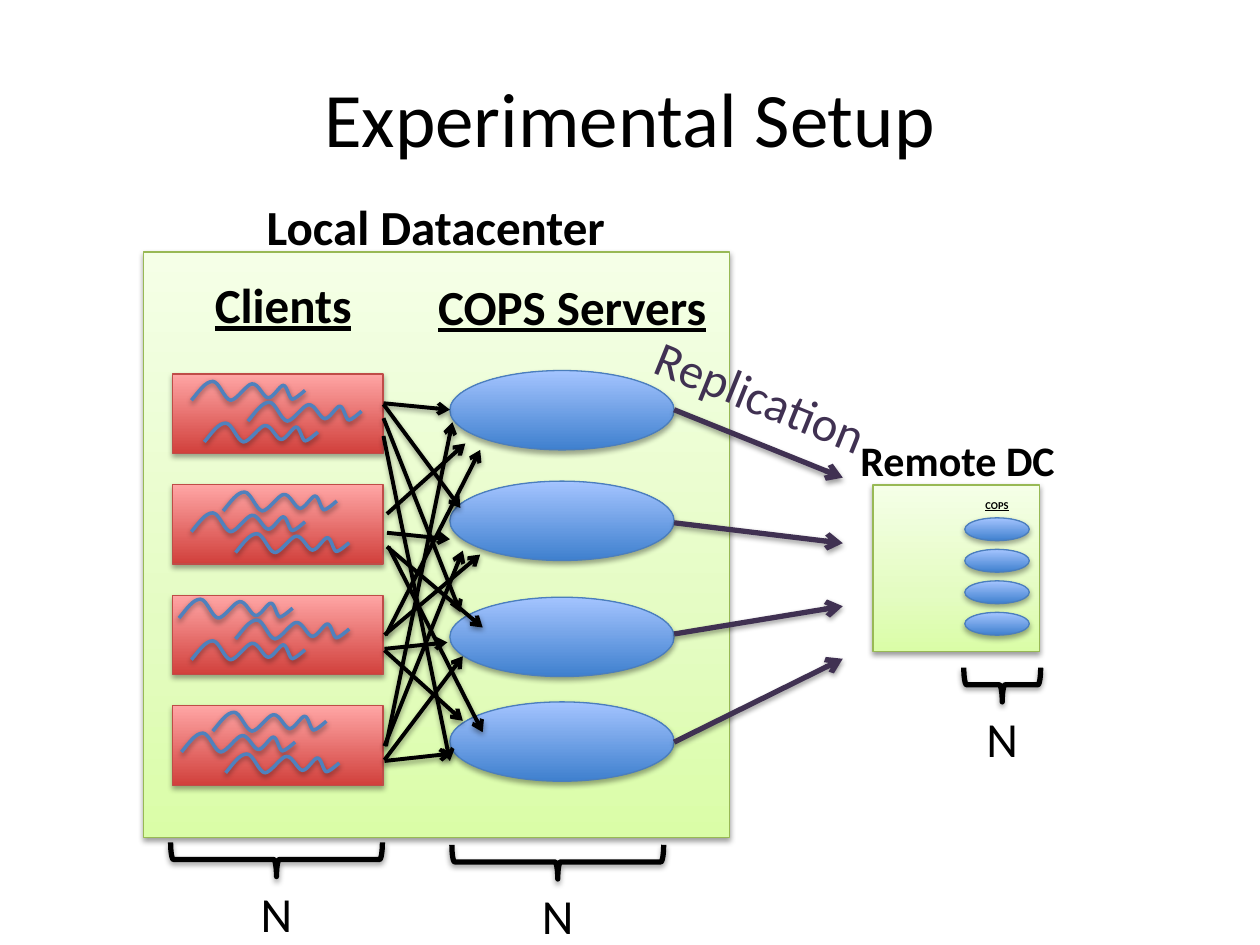
from copy import deepcopy

from lxml.etree import SubElement
from pptx import Presentation
from pptx.dml.color import RGBColor
from pptx.enum.shapes import MSO_CONNECTOR, MSO_SHAPE
from pptx.enum.text import MSO_ANCHOR, PP_ALIGN
from pptx.oxml.ns import qn
from pptx.util import Cm, Pt

BLACK = RGBColor(0x00, 0x00, 0x00)
PURPLE = RGBColor(0x40, 0x31, 0x52)
WAVE_BLUE = RGBColor(0x4F, 0x81, 0xBD)
GREEN_EDGE = RGBColor(0x98, 0xB9, 0x55)
BLUE_EDGE = RGBColor(0x4B, 0x7E, 0xBC)
RED_EDGE = RGBColor(0xBF, 0x4C, 0x48)
# Gradient stops run from the bottom of a shape to its top
GREEN = [(0, RGBColor(0xDA, 0xFD, 0xA7)), (0.35, RGBColor(0xE4, 0xFC, 0xC2)),
         (1, RGBColor(0xF5, 0xFF, 0xE7))]
BLUE = [(0, RGBColor(0x3F, 0x80, 0xCE)), (1, RGBColor(0xA4, 0xC4, 0xFF))]
RED = [(0, RGBColor(0xD1, 0x40, 0x3C)), (1, RGBColor(0xFF, 0xA6, 0xA5))]

# Start point, then three points for each Bezier segment
WAVE = [(0, 0.38), (0.15, 0.2), (0.28, 0), (0.43, 0), (0.56, 0), (0.66, 0.36), (0.79, 0.38),
        (0.91, 0.38), (1.12, 0.05), (1.22, 0.05), (1.35, 0.03), (1.45, 0.33), (1.55, 0.33),
        (1.65, 0.33), (1.78, 0.08), (1.85, 0.08), (1.93, 0.08), (1.96, 0.33), (2.03, 0.36),
        (2.08, 0.36), (2.21, 0.25), (2.29, 0.18)]
WAVE_STEP = 0.42
# For each client: top of its first thread, left of each of its threads
CLIENT_THREADS = [(0.15, (0.38, 1.52, 0.64)), (0.15, (1.02, 0.38, 1.27)),
                  (0.08, (0.13, 1.27, 0.38)), (0.13, (0.81, 0.18, 1.07))]
REQUESTS = [
    (4.83, 3.71, 6.17, 10.26), (4.83, 3.05, 6.17, 3.18),
    (4.83, 3.07, 6.38, 5.16), (4.83, 3.35, 6.38, 7.26),
    (4.88, 9.96, 6.22, 3.43), (4.85, 10.26, 6.22, 10.11),
    (4.85, 10.24, 6.43, 8.15), (4.85, 9.96, 6.43, 6.02),
    (4.93, 5.94, 6.83, 9.68), (4.9, 5.28, 6.48, 3.86),
    (4.9, 5.66, 6.17, 5.79), (4.9, 5.94, 6.83, 7.57),
    (4.88, 7.72, 6.78, 3.99), (4.85, 8.03, 6.43, 9.45),
    (4.85, 8, 6.12, 7.87), (4.85, 7.72, 6.78, 6.1),
]
REPLICATIONS = [(0, 1.37), (2.28, 2.69), (4.52, 3.96), (6.7, 5.02)]


def add_shadow(shape, alpha=38, distance=20000):
    effects = SubElement(shape._element.spPr, qn("a:effectLst"))
    shadow = SubElement(effects, qn("a:outerShdw"), blurRad="40000", dist=str(distance),
                        dir="5400000", rotWithShape="0")
    color = SubElement(shadow, qn("a:srgbClr"), val=str(BLACK))
    SubElement(color, qn("a:alpha"), val=str(alpha * 1000))


def set_line(shape, color, width):
    shape.line.color.rgb = color
    shape.line.width = Pt(width)


def add_label(shapes, text, left, top, width, height, size, color=BLACK,
              bold=None, underline=None, wrap=True):
    label = shapes.add_textbox(Cm(left), Cm(top), Cm(width), Cm(height))
    label.text_frame.word_wrap = wrap
    paragraph = label.text_frame.paragraphs[0]
    paragraph.text = text
    paragraph.alignment = PP_ALIGN.CENTER
    font = paragraph.font
    font.name, font.size, font.bold, font.underline = "Calibri", Pt(size), bold, underline
    font.color.rgb = color
    return label


def add_gradient_shape(shapes, kind, left, top, width, height, stops, edge,
                       alpha=35, distance=23000):
    shape = shapes.add_shape(kind, Cm(left), Cm(top), Cm(width), Cm(height))
    shape.fill.gradient()
    shape.fill.gradient_angle = 90
    stop_list = shape._element.spPr.find(".//" + qn("a:gsLst"))
    while len(stop_list) < len(stops):
        stop_list.append(deepcopy(stop_list[-1]))
    for stop, (position, color) in zip(shape.fill.gradient_stops, stops):
        stop.position = position
        stop.color.rgb = color
    set_line(shape, edge, 0.75)
    add_shadow(shape, alpha, distance)


def add_arrow(shapes, x1, y1, x2, y2, color, width):
    arrow = shapes.add_connector(MSO_CONNECTOR.STRAIGHT, Cm(x1), Cm(y1), Cm(x2), Cm(y2))
    set_line(arrow, color, width)
    SubElement(arrow.line._get_or_add_ln(), qn("a:tailEnd"), type="arrow")
    add_shadow(arrow)


def add_thread(shapes, left, top):
    """Draw one wave, turning each three points into a Bezier segment."""
    points = [(Cm(left + x), Cm(top + y)) for x, y in WAVE]
    builder = shapes.build_freeform(*points[0])
    builder.add_line_segments(points[1:], close=False)
    wave = builder.convert_to_shape()
    outline = wave._element.spPr.find(".//" + qn("a:path"))
    lines = outline.findall(qn("a:lnTo"))
    for start in range(0, len(lines), 3):
        curve = SubElement(outline, qn("a:cubicBezTo"))
        for line in lines[start:start + 3]:
            curve.append(line[0])
            outline.remove(line)
    wave.fill.background()
    set_line(wave, WAVE_BLUE, 2)
    add_shadow(wave)


def add_datacenter(shapes, left, top, side):
    add_gradient_shape(shapes, MSO_SHAPE.RECTANGLE, left, top, side, side,
                       GREEN, GREEN_EDGE, 38, 20000)


def add_servers(shapes, left, tops, width, height):
    for top in tops:
        add_gradient_shape(shapes, MSO_SHAPE.OVAL, left, top, width, height, BLUE, BLUE_EDGE)


def add_clients(shapes, left, top, width, height, pitch):
    for row, (first_thread, thread_lefts) in enumerate(CLIENT_THREADS):
        client_top = top + row * pitch
        add_gradient_shape(shapes, MSO_SHAPE.RECTANGLE, left, client_top, width, height,
                           RED, RED_EDGE)
        for thread, thread_left in enumerate(thread_lefts):
            add_thread(shapes, left + thread_left,
                       client_top + first_thread + thread * WAVE_STEP)


def add_local_datacenter(shapes, left, top, side):
    add_datacenter(shapes, left, top, side)
    add_label(shapes, "Local Datacenter", left + 2.15, top - 1.24, 7.47, 1.45, 28,
              bold=True, wrap=False)
    add_label(shapes, "COPS Servers", left + 5.46, top + 0.36, 6.35, 1.45, 28,
              bold=True, underline=True)
    add_servers(shapes, left + 6.17, [top + y for y in (2.39, 4.62, 6.96, 9.07)], 4.52, 1.6)
    add_label(shapes, "Clients", left + 0.41, top + 0.33, 4.8, 1.45, 28,
              bold=True, underline=True)
    add_clients(shapes, left + 0.58, top + 2.46, 4.24, 1.6, 2.23)
    for x1, y1, x2, y2 in REQUESTS:
        add_arrow(shapes, left + x1, top + y1, left + x2, top + y2, BLACK, 2.25)


def add_remote_datacenter(shapes, left, top, side):
    add_datacenter(shapes, left, top, side)
    add_label(shapes, "Remote DC", left - 1.47, top - 1.14, 6.35, 1.45, 24, bold=True)
    add_label(shapes, "COPS", left + 1.6, top + 0.15, 1.8, 0.41, 6, bold=True, underline=True)
    add_servers(shapes, left + 1.85, [top + 0.66 + 0.635 * row for row in range(4)], 1.3, 0.46)


def add_replication(shapes, left, top, width):
    for start, end in REPLICATIONS:
        add_arrow(shapes, left, top + start, left + width, top + end, PURPLE, 3)
    label = add_label(shapes, "Replication", left - 1.42, top - 1, 6.35, 1.45, 28, PURPLE)
    label.rotation = 22.1


def add_counted_brace(shapes, left, top, width, height):
    """Place a downward brace in the box as seen, with N beneath it."""
    center_x, center_y = left + width / 2, top + height / 2
    brace = shapes.add_shape(MSO_SHAPE.LEFT_BRACE, Cm(center_x - height / 2),
                             Cm(center_y - width / 2), Cm(height), Cm(width))
    brace.rotation = 270
    brace.fill.background()
    set_line(brace, BLACK, 3)
    add_shadow(brace)
    add_label(shapes, "N", center_x - 0.58, top + 0.7, 1.16, 1.45, 28, wrap=False)


def main():
    presentation = Presentation()
    presentation.slide_width, presentation.slide_height = Cm(25.4), Cm(19.05)
    shapes = presentation.slides.add_slide(presentation.slide_layouts[6]).shapes

    title = add_label(shapes, "Experimental Setup", 1.27, 0.76, 22.86, 3.18, 44)
    title.text_frame.vertical_anchor = MSO_ANCHOR.MIDDLE
    add_local_datacenter(shapes, 2.9, 5.08, 11.81)
    add_remote_datacenter(shapes, 17.6, 9.78, 3.35)
    add_replication(shapes, 13.59, 8.26, 3.4)
    for left, top, width in [(3.44, 16.98, 4.27), (9.11, 17.03, 4.27), (19.43, 13.46, 1.55)]:
        add_counted_brace(shapes, left, top, width, 0.69)

    presentation.save("out.pptx")


if __name__ == "__main__":
    main()
